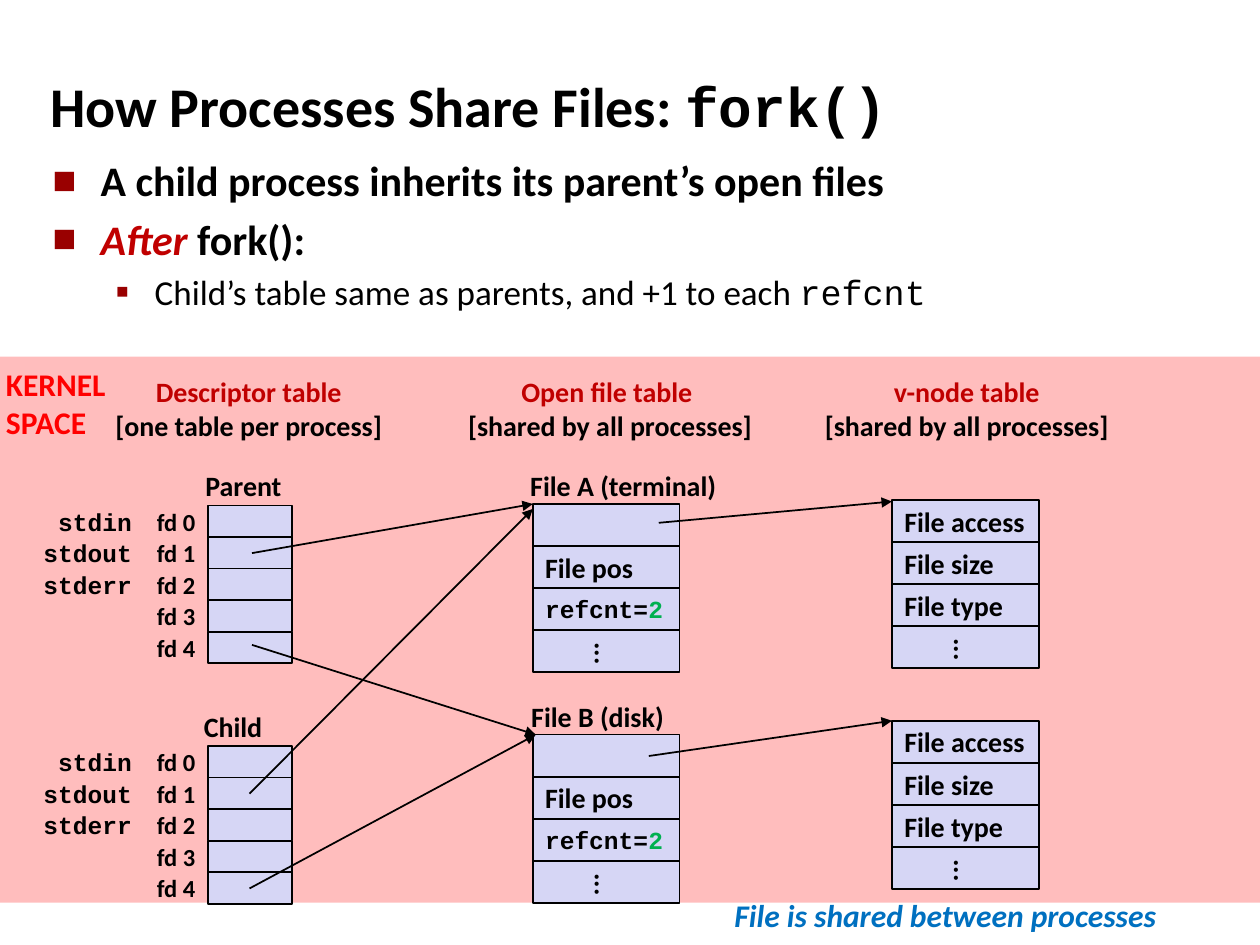
from lxml.etree import SubElement
from pptx import Presentation
from pptx.dml.color import RGBColor
from pptx.enum.shapes import MSO_CONNECTOR, MSO_SHAPE
from pptx.enum.text import MSO_ANCHOR, PP_ALIGN
from pptx.oxml.ns import qn
from pptx.util import Cm, Pt

BLACK = RGBColor(0x00, 0x00, 0x00)
RED = RGBColor(0xFF, 0x00, 0x00)
DARK_RED = RGBColor(0xC0, 0x00, 0x00)
BULLET_RED = RGBColor(0x99, 0x00, 0x00)
GREEN = RGBColor(0x00, 0xB0, 0x50)
BLUE = RGBColor(0x00, 0x70, 0xC0)
LAVENDER = RGBColor(0xD6, 0xD6, 0xF5)

SANS = "Calibri"
MONO = "Courier New"


class DiagramSlide:
    """Holds the style and the current slide."""

    def __init__(self, slide):
        self.slide = slide

    def set_text(self, paragraph, text, size=16, font=SANS, color=BLACK,
                 bold=True, italic=False, align=PP_ALIGN.LEFT):
        paragraph.text = text
        paragraph.alignment = align
        style = paragraph.font
        style.size, style.name = Pt(size), font
        style.bold, style.italic = bold, italic
        style.color.rgb = color

    def add_run(self, paragraph, text, font=None, color=None, italic=None):
        """Append a run that differs from its paragraph in some respect."""
        run = paragraph.add_run()
        run.text = text
        if font:
            run.font.name = font
        if color is not None:
            run.font.color.rgb = color
        run.font.italic = italic

    def text_box(self, left, top, width, height, wrap=False,
                 anchor=MSO_ANCHOR.MIDDLE):
        frame = self.slide.shapes.add_textbox(
            Cm(left), Cm(top), Cm(width), Cm(height)).text_frame
        frame.word_wrap = wrap
        frame.vertical_anchor = anchor
        return frame

    def label(self, left, top, width, height, text, **style):
        frame = self.text_box(left, top, width, height)
        self.set_text(frame.paragraphs[0], text, **style)

    def bullet(self, paragraph, symbol, percent, margin, hanging):
        properties = paragraph._p.get_or_add_pPr()
        properties.set("marL", str(Cm(margin)))
        properties.set("indent", str(-Cm(hanging)))
        color = SubElement(properties, qn("a:buClr"))
        SubElement(color, qn("a:srgbClr"), val=str(BULLET_RED))
        SubElement(properties, qn("a:buSzPct"), val=str(percent * 1000))
        SubElement(properties, qn("a:buFont"), typeface=SANS)
        SubElement(properties, qn("a:buChar"), char=symbol)
        # The default run style has to close the paragraph properties
        properties.append(properties.find(qn("a:defRPr")))

    def rectangle(self, left, top, width, height, color):
        shape = self.slide.shapes.add_shape(
            MSO_SHAPE.RECTANGLE, Cm(left), Cm(top), Cm(width), Cm(height))
        shape.shadow.inherit = False
        shape.fill.solid()
        shape.fill.fore_color.rgb = color
        return shape

    def band(self, left, top, width, height, color, opacity):
        shape = self.rectangle(left, top, width, height, color)
        shape.line.fill.background()
        fill_color = shape._element.spPr.find(".//" + qn("a:srgbClr"))
        SubElement(fill_color, qn("a:alpha"), val=str(opacity * 1000))

    def cell(self, left, top, width, height, text=""):
        shape = self.rectangle(left, top, width, height, LAVENDER)
        shape.line.color.rgb = BLACK
        shape.line.width = Pt(1)
        if not text:
            return
        frame = shape.text_frame
        frame.word_wrap = False
        frame.vertical_anchor = MSO_ANCHOR.MIDDLE
        paragraph = frame.paragraphs[0]
        if text.startswith("refcnt="):
            name, count = text.split("=")
            self.set_text(paragraph, name + "=", size=14, font=MONO)
            self.add_run(paragraph, count, color=GREEN)
        else:
            self.set_text(paragraph, text)
        if text == "...":
            frame._txBody.bodyPr.set("vert", "eaVert")

    def stack(self, left, top, width, height, texts):
        """Column of equally high cells."""
        step = height / len(texts)
        for row, text in enumerate(texts):
            self.cell(left, top + row * step, width, step, text)

    def descriptor_table(self, top):
        """Five descriptors with their numbers and standard stream names."""
        count, height, width = 5, 3.18, 1.7
        step = height / count
        self.stack(4.19, top, width, height, [""] * count)
        for number in range(count):
            self.label(2.49, top + number * step, width, step, f"fd {number}",
                       size=14, align=PP_ALIGN.RIGHT)
        for row, stream in enumerate(("stdin", "stdout", "stderr")):
            self.label(0.62, top - 0.1 + row * step, 2.29, 0.84, stream,
                       size=14, font=MONO, align=PP_ALIGN.RIGHT)

    def arrow(self, start_x, start_y, end_x, end_y):
        connector = self.slide.shapes.add_connector(
            MSO_CONNECTOR.STRAIGHT,
            Cm(start_x), Cm(start_y), Cm(end_x), Cm(end_y))
        connector.line.color.rgb = BLACK
        connector.line.width = Pt(1)
        properties = connector._element.spPr
        SubElement(properties.find(qn("a:ln")), qn("a:tailEnd"),
                   type="triangle")
        SubElement(properties, qn("a:effectLst"))


def main():
    presentation = Presentation()
    presentation.slide_width, presentation.slide_height = Cm(25.4), Cm(19.05)
    diagram = DiagramSlide(
        presentation.slides.add_slide(presentation.slide_layouts[6]))

    # Kernel space background
    diagram.band(0, 7.19, 25.4, 11.01, RED, 26)

    # Title
    frame = diagram.text_box(0.76, 1.07, 21.08, 2.11, wrap=True)
    title = frame.paragraphs[0]
    diagram.set_text(title, "How Processes Share Files: ", size=32)
    diagram.add_run(title, "fork()", font=MONO)

    # Bullets
    frame = diagram.text_box(0.81, 2.99, 23.09, 3.61, wrap=True,
                             anchor=MSO_ANCHOR.TOP)
    inherits = frame.paragraphs[0]
    diagram.set_text(inherits,
                     "A child process inherits its parent’s open files",
                     size=24)
    after = frame.add_paragraph()
    diagram.set_text(after, "", size=24)
    diagram.add_run(after, "After", color=DARK_RED, italic=True)
    diagram.add_run(after, " fork():")
    after.space_before = Pt(4.8)
    same_table = frame.add_paragraph()
    same_table.level = 1
    diagram.set_text(same_table,
                     "Child’s table same as parents, and +1 to each ",
                     size=20, bold=False)
    diagram.add_run(same_table, "refcnt", font=MONO)
    same_table.space_before = Pt(4)
    for paragraph in (inherits, after):
        diagram.bullet(paragraph, "■", 60, 0.97, 0.97)
    diagram.bullet(same_table, "▪", 110, 2.06, 0.79)

    # Column headings
    shared = "[shared by all processes]"
    for left, width, heading, scope in (
            (2.03, 5.97, "Descriptor table", "[one table per process]"),
            (9.14, 6.32, "Open file table ", shared),
            (16.33, 6.32, "v-node table", shared)):
        frame = diagram.text_box(left, 7.42, width, 1.63)
        diagram.set_text(frame.paragraphs[0], heading, color=DARK_RED,
                         align=PP_ALIGN.CENTER)
        diagram.set_text(frame.add_paragraph(), scope, align=PP_ALIGN.CENTER)

    # Descriptor tables of both processes
    for top in (10.19, 15.04):
        diagram.descriptor_table(top)

    # Open file table and v-node table
    for left, tops, texts in (
            (10.74, (10.16, 14.81), ("", "File pos", "refcnt=2", "...")),
            (17.98, (10.08, 14.53),
             ("File access", "File size", "File type", "..."))):
        for top in tops:
            diagram.stack(left, top, 2.96, 3.39, texts)

    # Table names
    for left, top, width, name in (
            (3.89, 9.32, 2.06, "Parent"), (3.86, 14.17, 1.7, "Child"),
            (10.44, 9.32, 4.29, "File A (terminal)"),
            (10.46, 13.97, 3.23, "File B (disk)")):
        diagram.label(left, top, width, 0.94, name)

    # Arrows from descriptors to files and from files to v-nodes
    for ends in ((5.08, 11.15, 10.74, 10.16), (5.08, 13, 10.8, 14.81),
                 (5.03, 16, 10.74, 10.26), (5.03, 17.91, 10.8, 14.81),
                 (13.28, 10.54, 17.98, 10.11), (13.08, 15.24, 17.98, 14.53)):
        diagram.arrow(*ends)

    # Kernel space label and closing remark
    frame = diagram.text_box(-0.13, 7.24, 2.62, 1.8, wrap=True,
                             anchor=MSO_ANCHOR.TOP)
    diagram.set_text(frame.paragraphs[0], "KERNEL SPACE", size=18, color=RED)
    diagram.label(14.5, 17.93, 9.12, 1.02, "File is shared between processes",
                  size=18, color=BLUE, italic=True, align=PP_ALIGN.CENTER)

    presentation.save("out.pptx")


if __name__ == "__main__":
    main()
